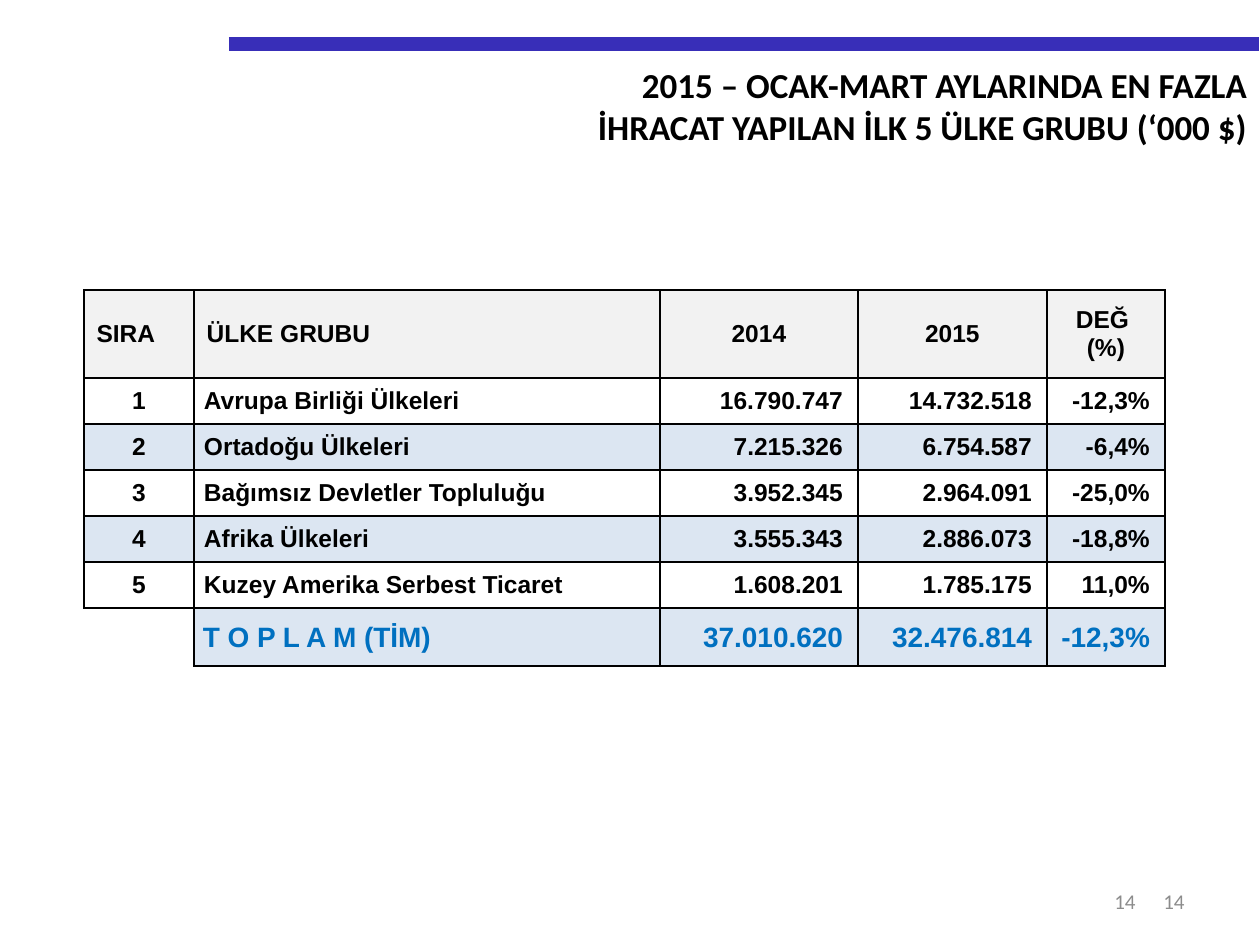
from lxml import etree
from pptx import Presentation
from pptx import util as u
from pptx.dml.color import RGBColor
from pptx.enum import shapes, text
from pptx.oxml.ns import qn

PX = 914400 / 126
BLACK, GREY, BAND, HEAD, TOTAL, BAR = (
    "000000", "8C8C8C", "DCE6F2", "F2F2F2", "0070C0", "382EB8")
LEFT, CENTER, RIGHT = text.PP_ALIGN.LEFT, text.PP_ALIGN.CENTER, text.PP_ALIGN.RIGHT

COLS = [110, 466, 198, 189, 118]
ROW_HEIGHTS = [88] + [46] * 5 + [58]
ROWS = [
    ["SIRA", "ÜLKE GRUBU", "2014", "2015", "DEĞ \n(%)"],
    ["1", "Avrupa Birliği Ülkeleri", "16.790.747", "14.732.518", "-12,3%"],
    ["2", "Ortadoğu Ülkeleri", "7.215.326", "6.754.587", "-6,4%"],
    ["3", "Bağımsız Devletler Topluluğu", "3.952.345", "2.964.091", "-25,0%"],
    ["4", "Afrika Ülkeleri", "3.555.343", "2.886.073", "-18,8%"],
    ["5", "Kuzey Amerika Serbest Ticaret", "1.608.201", "1.785.175", "11,0%"],
    ["", "T O P L A M (TİM)", "37.010.620", "32.476.814", "-12,3%"],
]


def px(n):
    return u.Emu(round(n * PX))


def rgb(color):
    return RGBColor.from_string(color)


def write(tf, lines, align, font, size, color, bold=False):
    for i, line in enumerate(lines):
        p = tf.paragraphs[0] if i == 0 else tf.add_paragraph()
        p.alignment = align
        r = p.add_run()
        r.text = line
        r.font.name, r.font.size, r.font.bold = font, u.Pt(size), bold
        r.font.color.rgb = rgb(color)


def add_bar(s, x, y, w):
    bar = s.shapes.add_connector(
        shapes.MSO_CONNECTOR.STRAIGHT, px(x), px(y), px(x + w), px(y))
    bar.line.color.rgb = rgb(BAR)
    bar.line.width = u.Pt(8.5)
    etree.SubElement(bar._element.spPr, qn("a:effectLst"))


def add_title(s, x, y, w, h):
    title = s.shapes.title
    title.left, title.top, title.width, title.height = map(px, (x, y, w, h))
    tf = title.text_frame
    tf.word_wrap = True
    tf.auto_size = text.MSO_AUTO_SIZE.NONE
    tf.vertical_anchor = text.MSO_ANCHOR.TOP
    write(tf, ["2015 – OCAK-MART AYLARINDA EN FAZLA",
               "İHRACAT YAPILAN İLK 5 ÜLKE GRUBU (‘000 $)"],
          RIGHT, "Calibri", 20, BLACK, True)


def add_page_number(s, x, y, w, h):
    tf = s.shapes.add_textbox(px(x), px(y), px(w), px(h)).text_frame
    tf.word_wrap = True
    tf.vertical_anchor = text.MSO_ANCHOR.MIDDLE
    write(tf, ["14"], RIGHT, "Calibri", 12, GREY)


def set_borders(cell, visible):
    tcPr = cell._tc.get_or_add_tcPr()
    for i, side in enumerate("LRTB"):
        ln = etree.Element(qn(f"a:ln{side}"), w=str(u.Pt(1)))
        if side in visible:
            fill = etree.SubElement(ln, qn("a:solidFill"))
            etree.SubElement(fill, qn("a:srgbClr"), val=BLACK)
        else:
            etree.SubElement(ln, qn("a:noFill"))
        tcPr.insert(i, ln)


def fill_cell(cell, value, row, col):
    last = len(ROWS) - 1
    blank = not value
    # Fill and borders
    if blank or row in (1, 3, 5):
        cell.fill.background()
    else:
        cell.fill.solid()
        cell.fill.fore_color.rgb = rgb(BAND if row else HEAD)
    set_borders(cell, "RT" if blank else "LRTB")
    if blank:
        return
    # Margins and text
    cell.vertical_anchor = text.MSO_ANCHOR.MIDDLE
    if row and col:
        cell.margin_left = px(1 if col > 1 else 9 if row == last else 10)
        cell.margin_right = px(15 if col > 1 else 1)
        cell.margin_top, cell.margin_bottom = px(1), 0
    if row == 0:
        align = LEFT if col < 2 else CENTER
    else:
        align = (CENTER, LEFT, RIGHT, RIGHT, RIGHT)[col]
    size, color = (16, TOTAL) if row == last else (14, BLACK)
    write(cell.text_frame, value.split("\n"), align, "Arial", size, color, True)


def add_export_table(s, x, y):
    table = s.shapes.add_table(len(ROWS), len(COLS), px(x), px(y),
                               px(sum(COLS)), px(sum(ROW_HEIGHTS))).table
    table.first_row = table.horz_banding = False
    for column, width in zip(table.columns, COLS):
        column.width = px(width)
    for row, height in zip(table.rows, ROW_HEIGHTS):
        row.height = px(height)
    for i, values in enumerate(ROWS):
        for j, value in enumerate(values):
            fill_cell(table.cell(i, j), value, i, j)


def main():
    prs = Presentation()
    prs.slide_width, prs.slide_height = px(1260), px(945)
    s = prs.slides.add_slide(prs.slide_layouts[5])
    add_bar(s, 229, 44, 1030)
    add_page_number(s, 903, 876, 294, 50)
    add_page_number(s, 883, 876, 265, 50)
    add_title(s, 134, 57, 1126, 97)
    add_export_table(s, 84, 290)
    prs.save("out.pptx")


if __name__ == "__main__":
    main()
